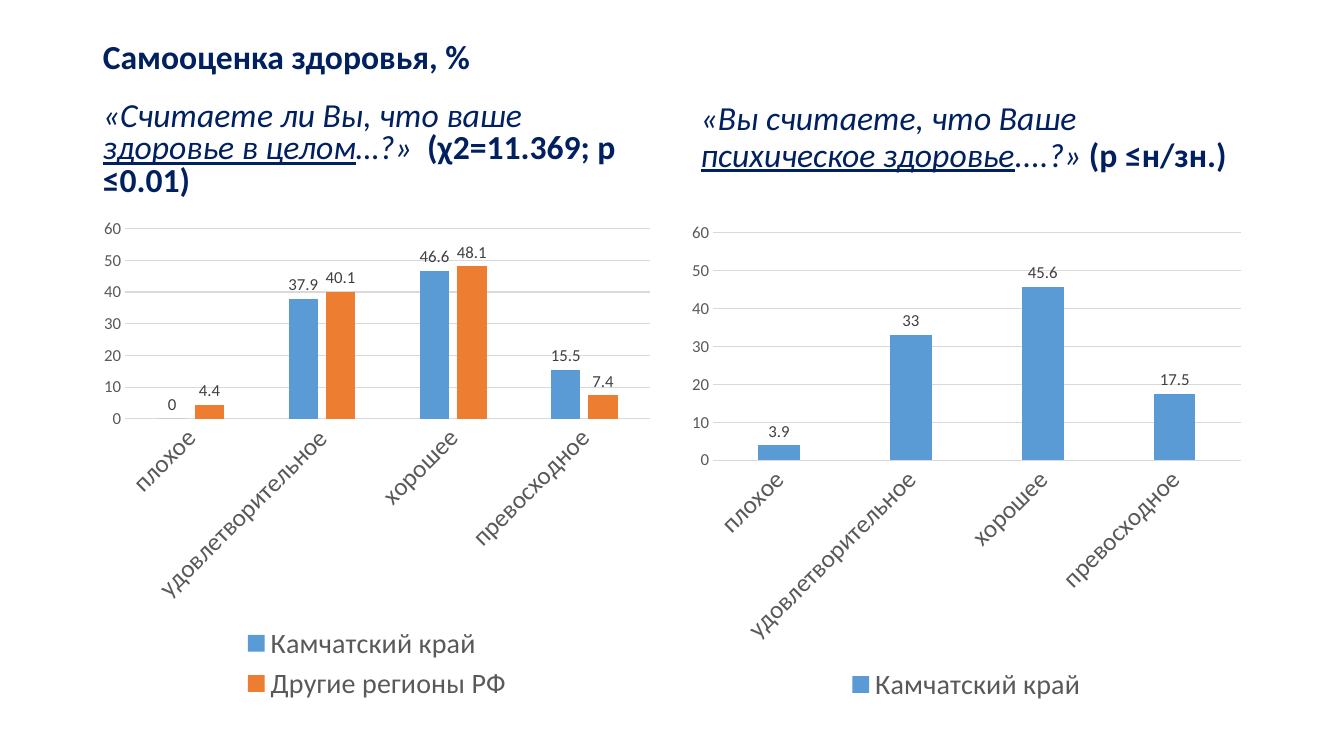
from pptx import Presentation
from pptx.chart.data import CategoryChartData
from pptx.dml.color import RGBColor
from pptx.enum.chart import XL_CHART_TYPE, XL_LABEL_POSITION, XL_LEGEND_POSITION, XL_TICK_MARK
from pptx.enum.text import MSO_ANCHOR, MSO_AUTO_SIZE, PP_ALIGN
from pptx.util import Inches, Pt

COLUMNS = XL_CHART_TYPE.COLUMN_CLUSTERED
OUTSIDE_END = XL_LABEL_POSITION.OUTSIDE_END
LEGEND_BOTTOM = XL_LEGEND_POSITION.BOTTOM
NO_TICK = XL_TICK_MARK.NONE
MIDDLE, BOTTOM = MSO_ANCHOR.MIDDLE, MSO_ANCHOR.BOTTOM
NO_AUTOFIT = MSO_AUTO_SIZE.NONE
LEFT = PP_ALIGN.LEFT

FONT = "Calibri"
COLORS = {
    "navy": "002060",
    "axis_text": "595959",
    "label_text": "404040",
    "grid": "D9D9D9",
    "kamchatka": "5B9BD5",
    "other_regions": "ED7D31",
}
COMPARISON_LAYOUT = 4
RATINGS = ["плохое", "удовлетворительное", "хорошее", "превосходное"]
KAMCHATKA, OTHER_REGIONS = "Камчатский край", "Другие регионы РФ"
SERIES_COLORS = {KAMCHATKA: "kamchatka", OTHER_REGIONS: "other_regions"}


def rgb(name):
    """Return the named palette colour."""
    return RGBColor.from_string(COLORS[name])


def format_font(font, size, color):
    """Set the typeface, size and colour of a font."""
    font.name = FONT
    font.size = Pt(size)
    font.color.rgb = rgb(color)


def place(shape, box):
    """Move a shape to a box given in inches."""
    shape.left, shape.top, shape.width, shape.height = map(Inches, box)


def fill_text(shape, runs, anchor=BOTTOM, spacing=0.9, before=0):
    """Fill a placeholder with one paragraph of (text, bold, italic, underline) runs."""
    frame = shape.text_frame
    frame.word_wrap = True
    frame.auto_size = NO_AUTOFIT
    frame.vertical_anchor = anchor
    paragraph = frame.paragraphs[0]
    paragraph.alignment = LEFT
    paragraph.line_spacing = spacing
    paragraph.space_before = Pt(before)
    for text, bold, italic, underline in runs:
        run = paragraph.add_run()
        run.text = text
        format_font(run.font, 24, "navy")
        run.font.bold, run.font.italic, run.font.underline = bold, italic, underline


def add_title(slide, box):
    """Place the slide title."""
    place(slide.shapes.title, box)
    fill_text(slide.shapes.title, [("Самооценка здоровья, %", True, False, False)], anchor=MIDDLE)


def add_question(placeholder, box, start, topic, end, significance, spacing):
    """Place a survey question with its underlined topic and significance."""
    place(placeholder, box)
    runs = [
        (start, False, True, False),
        (topic, False, True, True),
        (end, False, True, False),
        (significance, True, False, False),
    ]
    fill_text(placeholder, runs, spacing=spacing, before=10)


def format_axes(chart):
    """Format the slanted rating axis and the percentage axis."""
    ratings, percent = chart.category_axis, chart.value_axis
    for axis, size in ((ratings, 18), (percent, 12)):
        axis.major_tick_mark = axis.minor_tick_mark = NO_TICK
        format_font(axis.tick_labels.font, size, "axis_text")
    for line in (ratings.format.line, percent.major_gridlines.format.line):
        line.color.rgb = rgb("grid")
        line.width = Pt(0.75)
    percent.format.line.fill.background()
    percent.minimum_scale, percent.maximum_scale, percent.major_unit = 0, 60, 10
    ratings._element.txPr.bodyPr.set("rot", "-2700000")


def add_rating_chart(slide, box, series_values):
    """Add a clustered column chart of health ratings."""
    data = CategoryChartData()
    data.categories = RATINGS
    for name, values in series_values.items():
        data.add_series(name, values)
    chart = slide.shapes.add_chart(COLUMNS, *map(Inches, box), data).chart
    chart.font.name = FONT
    chart.font.size = Pt(10)
    chart.has_title = False
    chart.has_legend = True
    chart.legend.position = LEGEND_BOTTOM
    chart.legend.include_in_layout = False
    format_font(chart.legend.font, 20, "axis_text")
    format_axes(chart)
    plot = chart.plots[0]
    plot.gap_width, plot.overlap, plot.vary_by_categories = 219, -27, False
    for series in plot.series:
        series.format.fill.solid()
        series.format.fill.fore_color.rgb = rgb(SERIES_COLORS[series.name])
        labels = series.data_labels
        labels.show_value = True
        labels.position = OUTSIDE_END
        format_font(labels.font, 12, "label_text")


def main():
    """Build and save the slide."""
    presentation = Presentation()
    presentation.slide_width = Inches(13.33)
    presentation.slide_height = Inches(7.5)
    slide = presentation.slides.add_slide(presentation.slide_layouts[COMPARISON_LAYOUT])
    _, left_question, left_content, right_question, right_content = slide.placeholders
    for content in (left_content, right_content):
        content.element.getparent().remove(content.element)

    add_title(slide, (0.92, 0.24, 11.5, 0.69))
    add_question(left_question, (0.92, 0.93, 5.64, 1.09), "«Считаете ли Вы, что ваше ",
                 "здоровье в целом", "…?»  ", "(χ2=11.369; p ≤0.01)", spacing=0.8)
    add_rating_chart(slide, (0.92, 2.07, 5.64, 4.94), {
        KAMCHATKA: (0, 37.9, 46.6, 15.5),
        OTHER_REGIONS: (4.4, 40.1, 48.1, 7.4),
    })
    add_question(right_question, (6.85, 0.69, 5.67, 1.09), "«Вы считаете, что Ваше ",
                 "психическое здоровье", "....?» ", "(p ≤н/зн.)", spacing=0.9)
    add_rating_chart(slide, (6.75, 2.11, 5.67, 4.91), {KAMCHATKA: (3.9, 33, 45.6, 17.5)})
    presentation.save("out.pptx")


if __name__ == "__main__":
    main()
